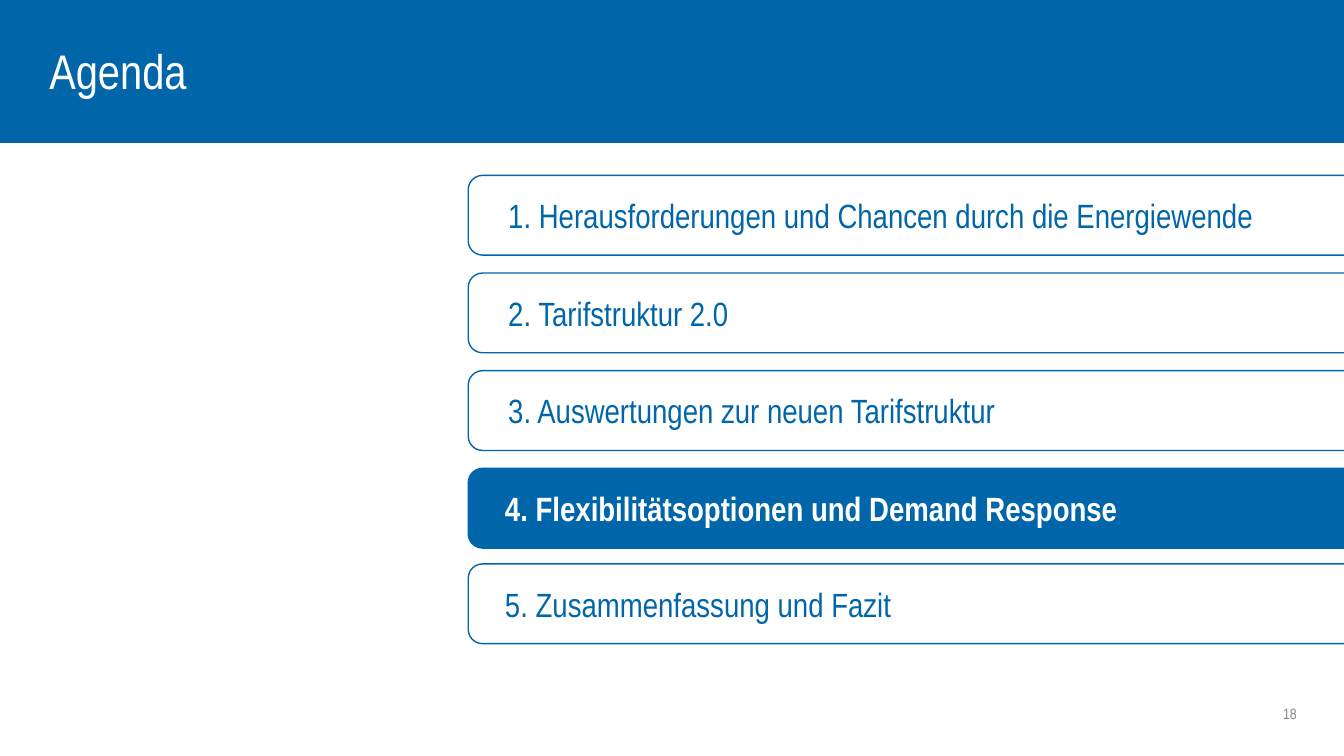
import pptx
import pptx.util
import pptx.dml.color
import pptx.enum.shapes
import pptx.enum.text

PX = 9525
BLUE = pptx.dml.color.RGBColor(0x00, 0x66, 0xA9)
WHITE = pptx.dml.color.RGBColor(0xFF, 0xFF, 0xFF)
GREY = pptx.dml.color.RGBColor(0x87, 0x88, 0x8A)
SHAPE = pptx.enum.shapes.MSO_SHAPE
ALIGN = pptx.enum.text.PP_ALIGN

BAR_X, BAR_W, BAR_H = 446, 837, 76
ACTIVE = 3
ITEMS = [
    ("1. Herausforderungen und Chancen durch die Energiewende", 167, 38),
    ("2. Tarifstruktur 2.0", 260, 38),
    ("3. Auswertungen zur neuen Tarifstruktur", 353, 38),
    ("4. Flexibilitätsoptionen und Demand Response", 446, 35),
    ("5. Zusammenfassung und Fazit", 537, 35),
]


def add_text(s, text, x, y, w, h, size, color, bold=False, align=ALIGN.LEFT):
    """Place one vertically centred line of text without insets."""
    tf = s.shapes.add_textbox(x * PX, y * PX, w * PX, h * PX).text_frame
    tf.margin_left = tf.margin_top = tf.margin_right = tf.margin_bottom = 0
    tf.word_wrap = True
    tf.vertical_anchor = pptx.enum.text.MSO_ANCHOR.MIDDLE
    tf.text = text
    p = tf.paragraphs[0]
    p.alignment = align
    font = p.runs[0].font
    font.name = "Arial Narrow"
    font.size = pptx.util.Pt(size)
    font.bold = bold
    font.color.rgb = color


def add_panel(s, kind, x, y, w, h, filled):
    """Place a blue-outlined shape, filled blue or left open."""
    sp = s.shapes.add_shape(kind, round(x * PX), round(y * PX), w * PX, h * PX)
    sp.shadow.inherit = False
    if filled:
        sp.fill.solid()
        sp.fill.fore_color.rgb = BLUE
    else:
        sp.fill.background()
    sp.line.color.rgb = BLUE
    sp.line.width = pptx.util.Pt(1)
    return sp


def add_header(s, x, y, w, h):
    """Draw the title band."""
    add_panel(s, SHAPE.RECTANGLE, x, y, w, h, True)
    add_text(s, "Agenda", x + 47, y + 42, 939, 50, 34.7, WHITE)


def add_item(s, text, x, y, w, h, indent, active):
    """Draw one agenda bar, rounded on its left side, with its text."""
    sp = add_panel(s, SHAPE.ROUND_2_SAME_RECTANGLE,
                   x + (w - h) / 2, y + (h - w) / 2, h, w, active)
    sp.rotation = 270
    sp.adjustments[0] = 0.18
    sp.adjustments[1] = 0
    add_text(s, text, x + indent, y + 12, w - 2 * indent, h - 24,
             24, WHITE if active else BLUE, bold=active)


def main():
    """Build the agenda slide."""
    prs = pptx.Presentation()
    prs.slide_width = 1280 * PX
    prs.slide_height = 720 * PX
    s = prs.slides.add_slide(prs.slide_layouts[6])
    add_header(s, 0, 0, 1280, 136)
    for i, (text, y, indent) in enumerate(ITEMS):
        add_item(s, text, BAR_X, y, BAR_W, BAR_H, indent, i == ACTIVE)
    add_text(s, "18", 1084, 667, 151, 25, 10.7, GREY, align=ALIGN.RIGHT)
    prs.save("out.pptx")


if __name__ == "__main__":
    main()
